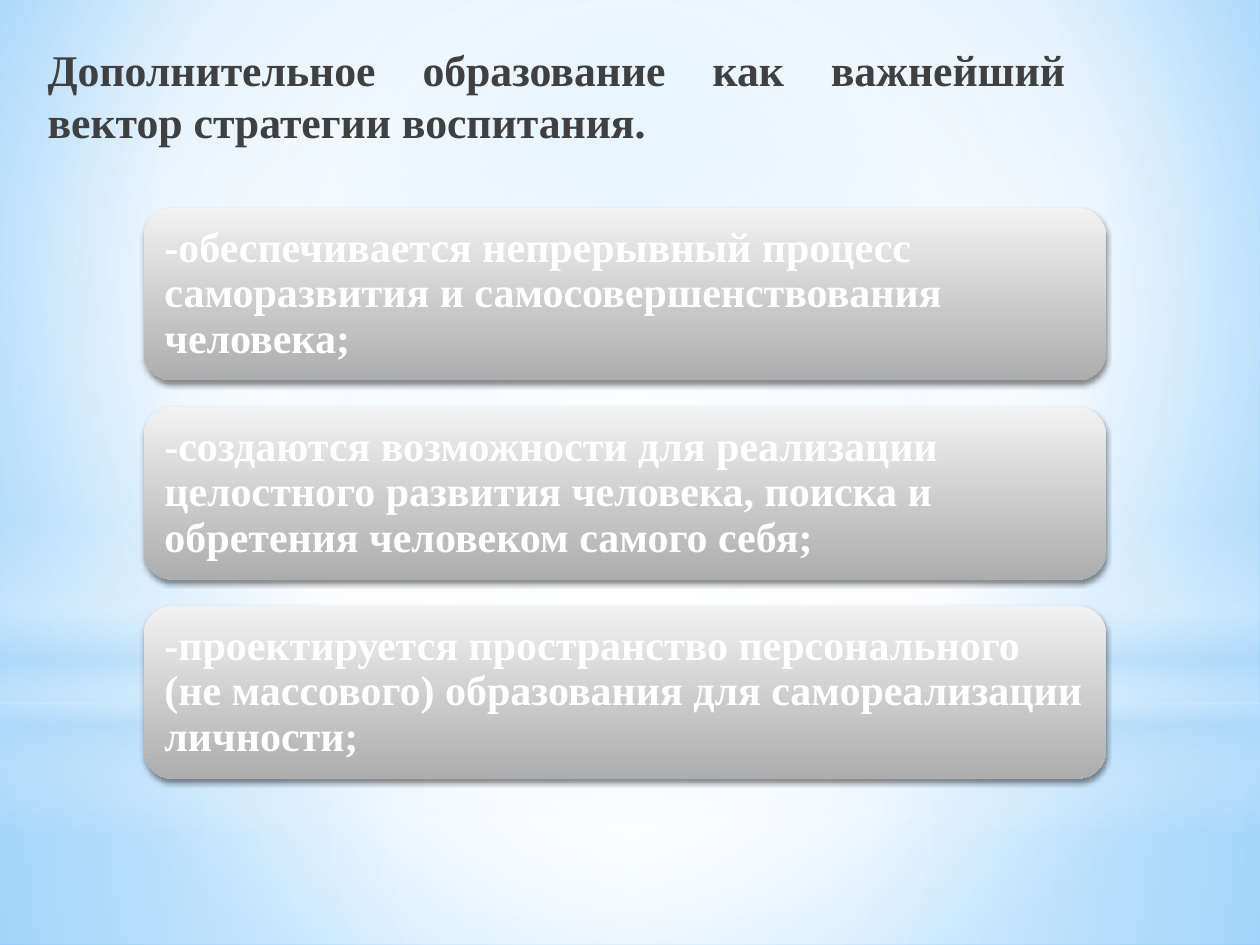
from lxml import etree
from pptx import Presentation
from pptx.dml.color import RGBColor
from pptx.enum.shapes import MSO_SHAPE
from pptx.enum.text import MSO_ANCHOR, PP_ALIGN
from pptx.oxml.ns import qn
from pptx.util import Inches, Pt

RECT, OVAL, ROUNDED = MSO_SHAPE.RECTANGLE, MSO_SHAPE.OVAL, MSO_SHAPE.ROUNDED_RECTANGLE
TOP, MIDDLE = MSO_ANCHOR.TOP, MSO_ANCHOR.MIDDLE
LEFT, JUSTIFY = PP_ALIGN.LEFT, PP_ALIGN.JUSTIFY
CENTER = (50, 50, 50, 50)

TITLE = "Дополнительное образование как важнейший вектор стратегии воспитания."
STATEMENTS = [
    "-обеспечивается непрерывный процесс саморазвития и самосовершенствования человека;",
    "-создаются возможности для реализации целостного развития человека, "
    "поиска и обретения человеком самого себя;",
    "-проектируется пространство персонального (не массового) образования "
    "для самореализации личности;",
]


def rgb(value):
    return RGBColor.from_string(value)


def add_color(parent, value, opacity):
    color = etree.SubElement(parent, qn("a:srgbClr"), val=str(rgb(value)))
    if opacity < 100:
        etree.SubElement(color, qn("a:alpha"), val=str(opacity * 1000))


def set_gradient(fill, properties, stops, focus=None):
    fill.solid()
    grad = etree.Element(qn("a:gradFill"), rotWithShape="1")
    stop_list = etree.SubElement(grad, qn("a:gsLst"))
    for position, value, opacity in stops:
        stop = etree.SubElement(stop_list, qn("a:gs"), pos=str(position * 1000))
        add_color(stop, value, opacity)
    if focus:
        circle = etree.SubElement(grad, qn("a:path"), path="circle")
        edges = {side: str(edge * 1000) for side, edge in zip("ltrb", focus)}
        etree.SubElement(circle, qn("a:fillToRect"), **edges)
    else:
        etree.SubElement(grad, qn("a:lin"), ang="5400000", scaled="0")
    properties.replace(properties.find(qn("a:solidFill")), grad)


class SlideBuilder:
    font = "Times New Roman"

    def __init__(self, s):
        self.s = s

    def background(self, stops, focus):
        fill = self.s.background.fill
        fill.solid()
        set_gradient(fill, self.s.element.find(".//" + qn("p:bgPr")), stops, focus)

    def shape(self, kind, box, stops, focus=None):
        sp = self.s.shapes.add_shape(kind, *map(Inches, box))
        set_gradient(sp.fill, sp.element.spPr, stops, focus)
        sp.line.fill.background()
        sp.shadow.inherit = False
        return sp

    def text(self, sp, text, size, color, align, anchor):
        tf = sp.text_frame
        tf.word_wrap = True
        tf.vertical_anchor = anchor
        tf.text = text
        p = tf.paragraphs[0]
        p.alignment = align
        font = p.runs[0].font
        font.name, font.size, font.bold = self.font, Pt(size), True
        font.color.rgb = rgb(color)
        return tf

    def title(self, text, box):
        sp = self.s.shapes.add_textbox(*map(Inches, box))
        self.text(sp, text, 25, "404040", JUSTIFY, TOP)

    def card(self, text, box):
        sp = self.shape(ROUNDED, box, [(0, "F2F2F2", 100), (100, "ADADAD", 100)])
        effects = sp.element.spPr.find(qn("a:effectLst"))
        shadow = etree.SubElement(
            effects, qn("a:outerShdw"), blurRad=str(Pt(3.1)), dist=str(Pt(1.8)),
            dir="5400000", rotWithShape="0")
        add_color(shadow, "000000", 45)
        tf = self.text(sp, text, 24, "FFFFFF", LEFT, MIDDLE)
        tf.margin_left = tf.margin_top = tf.margin_right = tf.margin_bottom = Inches(0.1)
        tf.paragraphs[0].line_spacing = 0.9


def main():
    prs = Presentation()
    prs.slide_width, prs.slide_height = Inches(10), Inches(7.5)
    b = SlideBuilder(prs.slides.add_slide(prs.slide_layouts[6]))

    b.background([(0, "9ED5FF", 100), (60, "FFFFFF", 100), (100, "5BB9FF", 100)],
                 (20, 10, 20, 60))
    b.shape(RECT, (0, 5.58, 10, 1.92),
            [(0, "FFFFFF", 91), (37, "FFFFFF", 76), (100, "B4DCFA", 79)], CENTER)
    b.shape(RECT, (0, 0, 10, 5.58),
            [(0, "FFFFFF", 89), (48, "FFFFFF", 62), (100, "B4DCFA", 79)], CENTER)
    b.shape(RECT, (0, 4.12, 10, 2.5),
            [(0, "FFFFFF", 0), (29, "FFFFFF", 30), (45, "B4DCFA", 40),
             (55, "FFFFFF", 26), (65, "B4DCFA", 60), (100, "FFFFFF", 0)])
    b.shape(OVAL, (0, 1.75, 10, 5.58), [(0, "FFFFFF", 100), (56, "FFFFFF", 0)], CENTER)

    b.title(TITLE, (0.28, 0.29, 8.27, 1.25))
    for i, text in enumerate(STATEMENTS):
        b.card(text, (1.14, 1.65 + 1.58 * i, 7.64, 1.37))

    prs.save("out.pptx")


if __name__ == "__main__":
    main()
